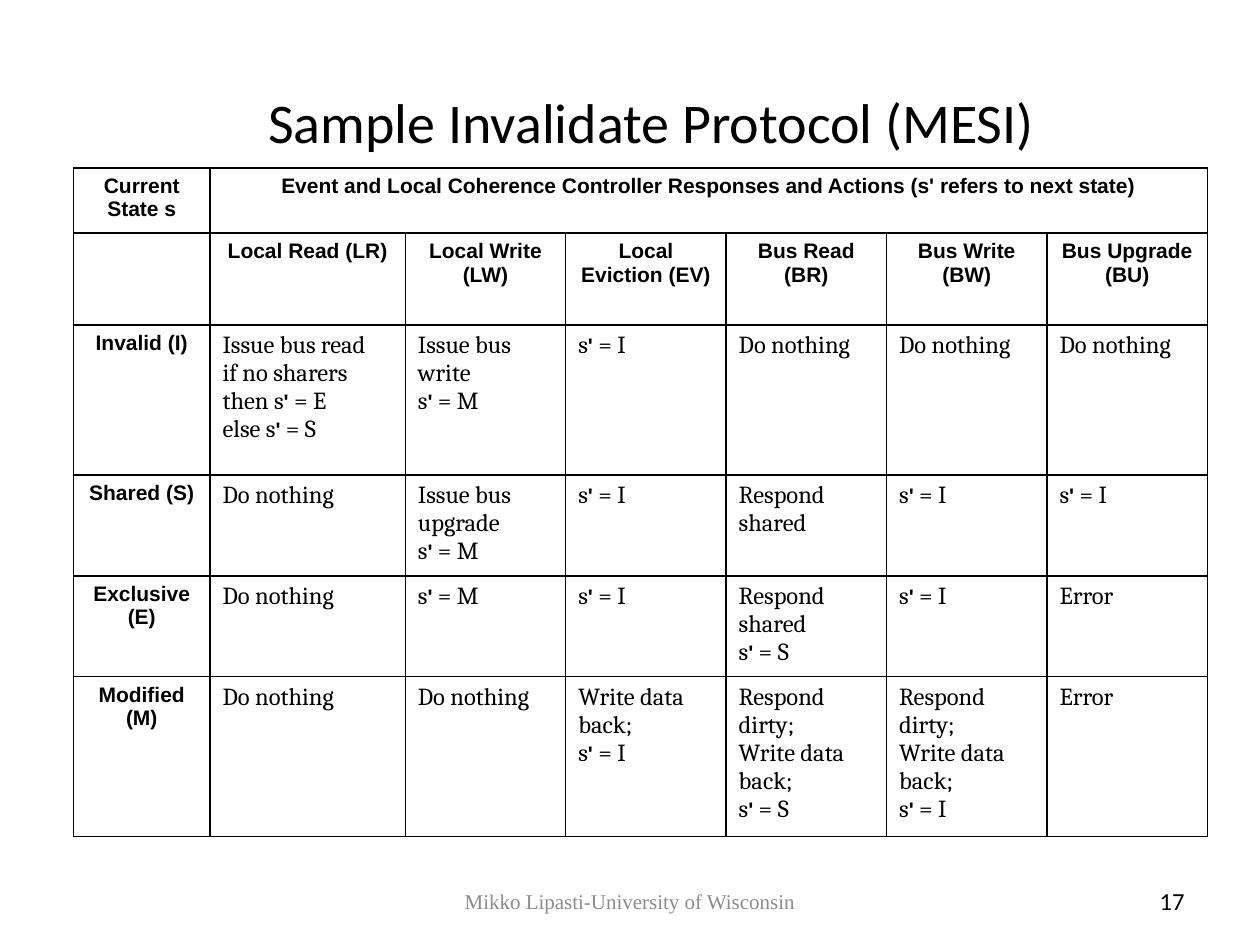
from lxml import etree
from pptx import Presentation
from pptx.dml.color import RGBColor
from pptx.enum.text import MSO_ANCHOR, PP_ALIGN
from pptx.oxml.ns import qn
from pptx.util import Pt

CENTER, LEFT, RIGHT = PP_ALIGN.CENTER, PP_ALIGN.LEFT, PP_ALIGN.RIGHT
MIDDLE = MSO_ANCHOR.MIDDLE
TITLE_ONLY = 5
BLACK, GRAY = "000000", "8C8C8C"

COLUMN_WIDTHS = [78, 111.6] + [91.68] * 5
ROW_HEIGHTS = [37.2, 52.5, 85.7, 57.6, 57.4, 91.2]
SPAN_HEADING = "Event and Local Coherence Controller Responses and Actions (s' refers to next state)"
PROTOCOL = [
    ["Current State s", SPAN_HEADING, "", "", "", "", ""],
    ["", "Local Read (LR)", "Local Write (LW)", "Local Eviction (EV)",
     "Bus Read (BR)", "Bus Write (BW)", "Bus Upgrade (BU)"],
    ["Invalid (I)", "Issue bus read\nif no sharers then s' = E\nelse s' = S",
     "Issue bus write\ns' = M", "s' = I", "Do nothing", "Do nothing", "Do nothing"],
    ["Shared (S)", "Do nothing", "Issue bus upgrade\ns' = M", "s' = I",
     "Respond shared", "s' = I", "s' = I"],
    ["Exclusive (E)", "Do nothing", "s' = M", "s' = I",
     "Respond shared\ns' = S", "s' = I", "Error"],
    ["Modified (M)", "Do nothing", "Do nothing", "Write data back;\ns' = I",
     "Respond dirty;\nWrite data back;\ns' = S",
     "Respond dirty;\nWrite data back;\ns' = I", "Error"],
]


def style_font(font, name, size, color=BLACK, bold=False):
    """Set typeface, size, colour and weight of a font."""
    font.name, font.size, font.bold = name, Pt(size), bold
    font.color.rgb = RGBColor.from_string(color)


def add_title(slide, wording):
    """Fill and place the title placeholder."""
    title = slide.shapes.title
    title.left, title.top, title.width, title.height = Pt(54), Pt(48), Pt(636.5), Pt(42)
    title.text_frame.text = wording
    title.text_frame.vertical_anchor = MIDDLE
    heading = title.text_frame.paragraphs[0]
    heading.alignment = CENTER
    style_font(heading.font, "Calibri", 32)


def add_label(slide, wording, left, width, align, font_name, size, color):
    """Add a one-line label in the footer band."""
    frame = slide.shapes.add_textbox(Pt(left), Pt(500.5), Pt(width), Pt(28.8)).text_frame
    frame.word_wrap = True
    frame.vertical_anchor = MIDDLE
    label = frame.paragraphs[0]
    label.text, label.alignment = wording, align
    style_font(label.font, font_name, size, color)


def outline_cell(cell):
    """Draw a one-point black border on all sides and clear the fill."""
    properties = cell._tc.get_or_add_tcPr()
    for side in ("a:lnL", "a:lnR", "a:lnT", "a:lnB"):
        border = etree.SubElement(properties, qn(side), w=str(Pt(1)))
        fill = etree.SubElement(border, qn("a:solidFill"))
        etree.SubElement(fill, qn("a:srgbClr"), val=BLACK)
    cell.fill.background()


def write_heading(cell, wording):
    """Write a bold centred heading."""
    heading = cell.text_frame.paragraphs[0]
    heading.text, heading.alignment = wording, CENTER
    style_font(heading.font, "Arial", 12, bold=True)


def write_action(cell, wording):
    """Write action lines, with each prime mark in bold Arial."""
    cell.text_frame.text = wording
    for line in cell.text_frame.paragraphs:
        before, prime, after = line.text.partition("'")
        line.clear()
        line.alignment = LEFT
        style_font(line.font, "Cambria", 14)
        line.add_run().text = before
        if prime:
            mark = line.add_run()
            mark.text = prime
            style_font(mark.font, "Arial", 12, bold=True)
            line.add_run().text = after


def add_protocol_table(slide):
    """Add the table of states, events and actions."""
    table = slide.shapes.add_table(
        len(ROW_HEIGHTS), len(COLUMN_WIDTHS), Pt(42), Pt(96),
        Pt(sum(COLUMN_WIDTHS)), Pt(sum(ROW_HEIGHTS))).table
    table.first_row = table.horz_banding = False
    for column, width in zip(table.columns, COLUMN_WIDTHS):
        column.width = Pt(width)
    for row, height in zip(table.rows, ROW_HEIGHTS):
        row.height = Pt(height)
    for r, entries in enumerate(PROTOCOL):
        for c, wording in enumerate(entries):
            cell = table.cell(r, c)
            outline_cell(cell)
            write = write_heading if r < 2 or c == 0 else write_action
            write(cell, wording)
    table.cell(0, 1).merge(table.cell(0, len(COLUMN_WIDTHS) - 1))


def main():
    """Build and save the slide."""
    deck = Presentation()
    deck.slide_width, deck.slide_height = Pt(720), Pt(540)
    slide = deck.slides.add_slide(deck.slide_layouts[TITLE_ONLY])
    add_title(slide, "Sample Invalidate Protocol (MESI)")
    add_label(slide, "17", 600, 84, RIGHT, "Calibri", 14, BLACK)
    add_protocol_table(slide)
    add_label(slide, "Mikko Lipasti-University of Wisconsin", 246, 228, CENTER,
              "Times New Roman", 12, GRAY)
    deck.save("out.pptx")


if __name__ == "__main__":
    main()
